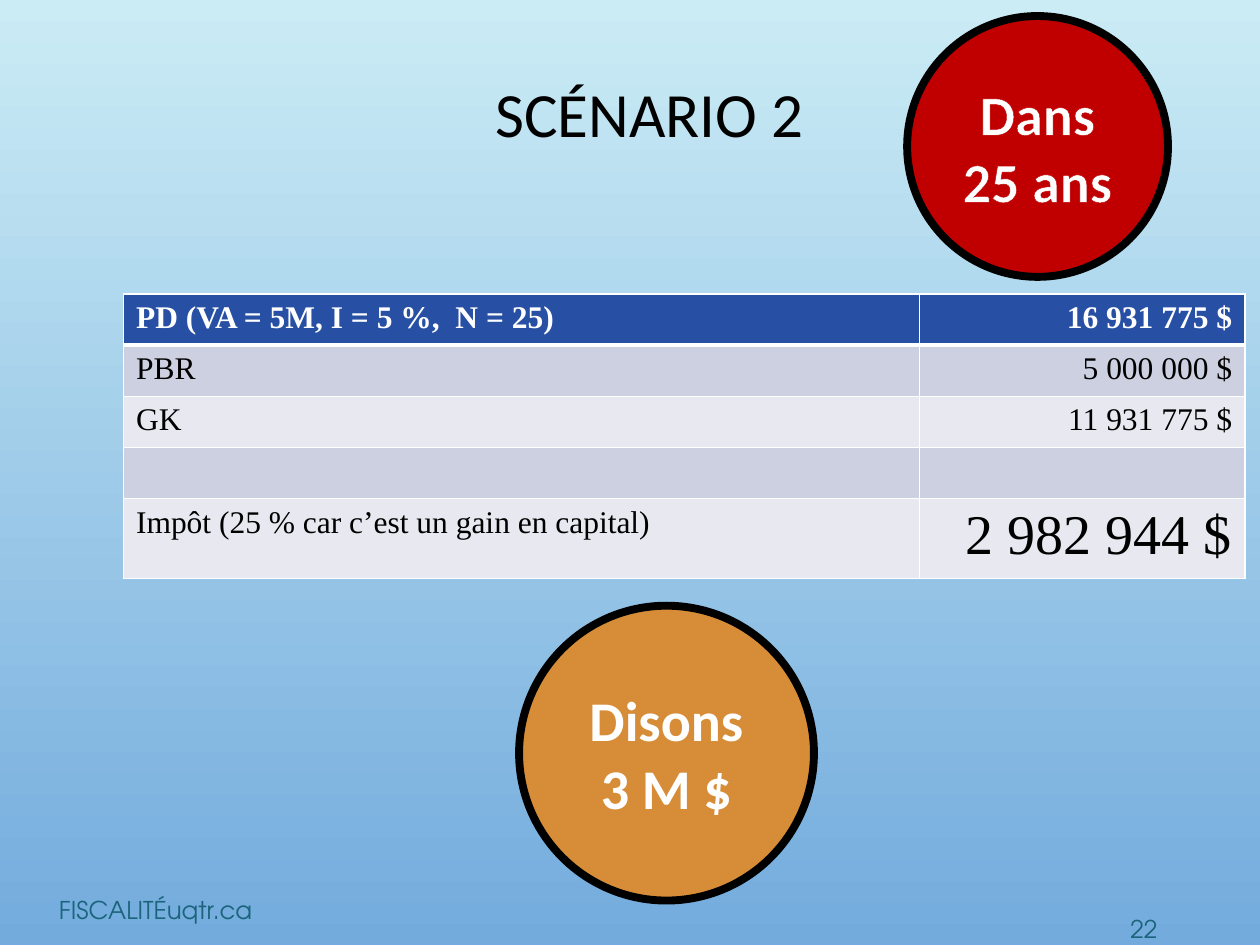
import dataclasses

import pptx
import pptx.dml.color
import pptx.enum.shapes
import pptx.enum.text
import pptx.oxml
import pptx.oxml.ns
import pptx.util

ALIGN = pptx.enum.text.PP_ALIGN
ANCHOR = pptx.enum.text.MSO_ANCHOR
WIDTH, HEIGHT = 10, 7.5


@dataclasses.dataclass(frozen=True)
class Theme:
    """Colours, fonts and text formats of the slide."""
    sky: tuple = ("CBECF5", "73ABDD")
    black: str = "000000"
    white: str = "FFFFFF"
    header: str = "274FA4"
    bands: tuple = ("CDD0E0", "E8E9F0")
    amber: str = "D78D38"
    red: str = "C00000"
    title: dict = dataclasses.field(
        default_factory=lambda: dict(name="Calibri", size=36, color="000000"))
    badge: dict = dataclasses.field(
        default_factory=lambda: dict(name="Calibri", size=32, color="FFFFFF", bold=True))
    footer: dict = dataclasses.field(
        default_factory=lambda: dict(name="TeX Gyre Adventor", size=14, color="1C647B"))
    cell: dict = dataclasses.field(
        default_factory=lambda: dict(name="Times New Roman", size=18, color="000000", bold=False))


THEME = Theme()


def rgb(code):
    """Turn a hex code into a colour."""
    return pptx.dml.color.RGBColor.from_string(code)


def place(left, top, width, height):
    """Turn shares of the slide into a box of lengths."""
    shares = ((left, WIDTH), (top, HEIGHT), (width, WIDTH), (height, HEIGHT))
    return [pptx.util.Inches(share * whole) for share, whole in shares]


def write(frame, text, style, **layout):
    """Write one formatted paragraph and return its span."""
    para = frame.paragraphs[0]
    for name, value in layout.items():
        setattr(para, name, value)
    span = para.add_run()
    span.text = text
    for name, value in style.items():
        if name == "color":
            span.font.color.rgb = rgb(value)
        else:
            setattr(span.font, name, pptx.util.Pt(value) if name == "size" else value)
    return span


def outline_xml(tag, color, points):
    """Build a solid line element for a cell border or text outline."""
    line = pptx.oxml.parse_xml(
        f'<a:{tag} {pptx.oxml.ns.nsdecls("a")} w="{pptx.util.Pt(points)}">'
        f'<a:solidFill><a:srgbClr val="{color}"/></a:solidFill></a:{tag}>')
    return line


def paint_background(page):
    """Fill the page with a gradient from top to bottom."""
    fill = page.background.fill
    fill.gradient()
    fill.gradient_angle = 270
    for stop, color, position in zip(fill.gradient_stops, THEME.sky, (0, 1)):
        stop.color.rgb = rgb(color)
        stop.position = position


def add_label(page, box, text, style, **layout):
    """Add a line of text centred vertically in its box."""
    frame = page.shapes.add_textbox(*box).text_frame
    frame.word_wrap = True
    frame.vertical_anchor = ANCHOR.MIDDLE
    write(frame, text, style, **layout)


def add_circle(page, box, text, style, fill=None):
    """Add a circle with centred text, bordered when it is filled."""
    circle = page.shapes.add_shape(pptx.enum.shapes.MSO_SHAPE.OVAL, *box)
    circle.shadow.inherit = False
    if fill:
        circle.fill.solid()
        circle.fill.fore_color.rgb = rgb(fill)
        circle.line.color.rgb = rgb(THEME.black)
        circle.line.width = pptx.util.Pt(4.5)
    else:
        circle.fill.background()
        circle.line.fill.background()
        circle.text_frame.margin_left = circle.text_frame.margin_right = pptx.util.Inches(0.02)
    circle.text_frame.word_wrap = True
    circle.text_frame.vertical_anchor = ANCHOR.MIDDLE
    return write(circle.text_frame, text, style, alignment=ALIGN.CENTER)


def format_cell(cell, fill, bottom):
    """Give a cell its white borders and its fill."""
    cell.fill.solid()
    cell.fill.fore_color.rgb = rgb(fill)
    properties = cell._tc.get_or_add_tcPr()
    for index, (tag, points) in enumerate((("lnL", 1), ("lnR", 1), ("lnT", 1), ("lnB", bottom))):
        properties.insert(index, outline_xml(tag, THEME.white, points))


def add_tax_table(page, box):
    """Add the table that leads from the proceeds to the tax."""
    rows = (
        ("PD (VA = 5M, I = 5 %,  N = 25)", "16 931 775 $"),
        ("PBR", "5 000 000 $"),
        ("GK", "11 931 775 $"),
        ("", ""),
        ("Impôt (25 % car c’est un gain en capital)", "2 982 944 $"),
    )
    last = len(rows) - 1
    table = page.shapes.add_table(len(rows), 2, *box).table
    for column, share in zip(table.columns, (0.71, 0.29)):
        column.width = int(box[2] * share)
    for index, texts in enumerate(rows):
        table.rows[index].height = int(box[3] * (0.28 if index == last else 0.18))
        fill = THEME.bands[(index - 1) % 2] if index else THEME.header
        for column, text in enumerate(texts):
            cell = table.cell(index, column)
            format_cell(cell, fill, 1 if index else 3)
            style = dict(THEME.cell)
            if index == 0:
                style.update(color=THEME.white, bold=True)
            if (index, column) == (last, 1):
                style.update(size=32)
            if text:
                write(cell.text_frame, text, style,
                      alignment=ALIGN.RIGHT if column else ALIGN.LEFT)


def add_footer(page, left, top):
    """Add the site name and the page number."""
    add_label(page, place(left, top, 0.593, 0.053), "FISCALITÉuqtr.ca", THEME.footer)
    add_circle(page, place(left + 0.851, top + 0.02, 0.04, 0.053), "22", THEME.footer)


def build_slide(deck):
    """Build the scenario slide."""
    page = deck.slides.add_slide(deck.slide_layouts[6])
    paint_background(page)
    add_label(page, place(0.09, 0.037, 0.851, 0.173), "SCÉNARIO 2", THEME.title,
              alignment=ALIGN.CENTER, line_spacing=0.9)
    add_tax_table(page, place(0.098, 0.311, 0.89, 0.301))
    add_footer(page, 0.037, 0.936)
    add_circle(page, place(0.412, 0.641, 0.234, 0.312), "Disons 3 M $",
               THEME.badge, THEME.amber)
    span = add_circle(page, place(0.72, 0.017, 0.207, 0.276), "Dans 25 ans",
                      THEME.badge, THEME.red)
    span.font._element.insert(0, outline_xml("ln", THEME.red, 0.75))


def main():
    """Create the deck and save it."""
    deck = pptx.Presentation()
    deck.slide_width = pptx.util.Inches(WIDTH)
    deck.slide_height = pptx.util.Inches(HEIGHT)
    build_slide(deck)
    deck.save("out.pptx")


if __name__ == "__main__":
    main()
